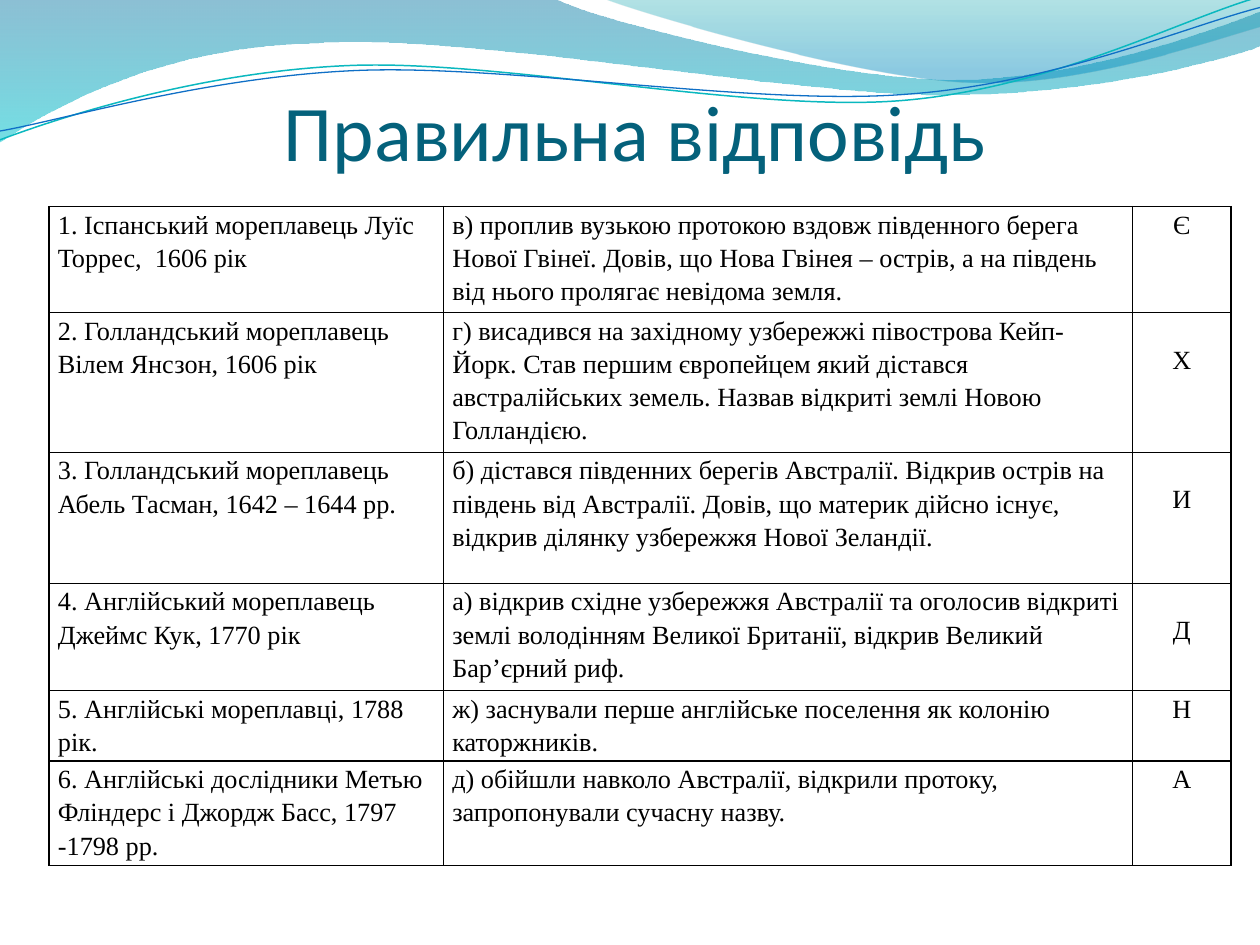
"""Build a slide with a table of answers below a band of waves."""
import math
import pptx
import pptx.dml.color
import pptx.enum.text
import pptx.oxml
import pptx.oxml.ns
import pptx.util
from pptx.util import Inches


def color(code):
    """Turn a hex string into a colour."""
    return pptx.dml.color.RGBColor.from_string(code)


def trace(shapes, start, parts, closed):
    """Draw an outline whose parts are points (lines) or point triples (curves)."""
    pen = shapes.build_freeform(Inches(start[0]), Inches(start[1]), scale=1.0)
    pen.add_line_segments([(Inches(part[i]), Inches(part[i + 1]))
                           for part in parts for i in range(0, len(part), 2)], close=closed)
    shape = pen.convert_to_shape()
    shape.shadow.inherit = False
    lines = iter(shape.element.spPr.findall(".//" + pptx.oxml.ns.qn("a:lnTo")))
    for part in parts:
        line = next(lines)
        if len(part) == 6:
            curve = pptx.oxml.parse_xml(f'<a:cubicBezTo {pptx.oxml.ns.nsdecls("a")}/>')
            line.addprevious(curve)
            for node in (line, next(lines), next(lines)):
                curve.append(node[0])
                node.getparent().remove(node)
    return shape


deck = pptx.Presentation()
deck.slide_width, deck.slide_height = Inches(10), Inches(7.5)
slide = deck.slides.add_slide(deck.slide_layouts[5])
shapes = slide.shapes
slide.background.fill.solid()
slide.background.fill.fore_color.rgb = color("FFFFFF")

bands = [
    ((0, 0), [(4.4, -0.01), (4.76, 0.17, 6.64, 0.63, 7.58, 0.63),
              (8.53, 0.63, 9.58, 0.26, 10, 0.09), (10.01, 0.36),
              (9.83, 0.44, 8.7, 0.76, 7.46, 0.75), (6.22, 0.75, 3.82, 0.28, 2.57, 0.34),
              (1.29, 0.36, 0.46, 0.83, -0.01, 1.13), (0, 0)],
     [(0, "0074A1", 45), (1, "00C6CF", 55)]),
    ((4.79, -0.01), [(5.09, 0.11, 6.82, 0.62, 7.69, 0.65),
                     (8.56, 0.69, 9.61, 0.32, 10, 0.21), (10, 0), (4.79, -0.01)],
     [(0, "00A1A9", 30), (0.8, "008BBF", 45)]),
]
for start, parts, stops in bands:
    band = trace(shapes, start, parts, True)
    band.line.fill.background()
    band.fill.gradient()
    band.fill.gradient_angle = 270
    for stop, (place, code, alpha) in zip(band.fill.gradient_stops, stops):
        stop.position = place
        stop.color.rgb = color(code)
    tints = band.element.spPr.findall(".//" + pptx.oxml.ns.qn("a:srgbClr"))
    for tint, (place, code, alpha) in zip(tints, stops):
        tint.append(pptx.oxml.parse_xml(
            f'<a:alpha {pptx.oxml.ns.nsdecls("a")} val="{alpha * 1000}"/>'))

waves = [
    ((4.99, 0.57), [(0, 1.11), (0.48, 0.93, 1.58, 0.57, 2.77, 0.52),
                    (3.95, 0.47, 5.93, 0.89, 7.13, 0.8),
                    (8.33, 0.71, 9.38, 0.15, 9.98, -0.02)], "0AB8BF", 0.85),
    ((5, 0.59), [(0, 1.04), (0.47, 0.96, 1.64, 0.61, 2.83, 0.56),
                 (4.03, 0.51, 5.97, 0.84, 7.17, 0.75),
                 (8.36, 0.67, 9.41, 0.21, 10, 0.06)], "0F6FC6", 0.75),
]
tilt = math.radians(2.7)
for (mid, level), parts, code, width in waves:
    flat = []
    for part in parts:
        turned = []
        for x, y in zip(part[::2], part[1::2]):
            turned += [mid + (x - mid) * math.cos(tilt) - (y - level) * math.sin(tilt),
                       level + (x - mid) * math.sin(tilt) + (y - level) * math.cos(tilt)]
        flat.append(turned)
    wave = trace(shapes, flat[0], flat[1:], False)
    wave.rotation = 357.3
    wave.fill.background()
    wave.line.color.rgb = color(code)
    wave.line.width = pptx.util.Pt(width)

title = shapes.title
shapes.element.append(title.element)
title.left, title.top, title.width, title.height = map(Inches, (0.54, 0.85, 9, 0.56))
frame = title.text_frame
frame.text = "Правильна відповідь"
frame.auto_size = pptx.enum.text.MSO_AUTO_SIZE.NONE
frame.vertical_anchor = pptx.enum.text.MSO_ANCHOR.BOTTOM
frame.margin_left = frame.margin_right = frame.margin_bottom = 0
frame.margin_top = Inches(0.05)
head = frame.paragraphs[0]
head.alignment = pptx.enum.text.PP_ALIGN.CENTER
head.font.name, head.font.size = "Calibri", pptx.util.Pt(45)
head.font.color.rgb = color("04617B")

rows = [
    (0.84, 0, "1. Іспанський мореплавець Луїс Торрес,  1606 рік",
     "в) проплив вузькою протокою вздовж південного берега Нової Гвінеї. Довів, що Нова Гвінея – острів, а на південь від нього пролягає невідома земля.", "Є"),
    (1.11, 0.23, "2. Голландський мореплавець Вілем Янсзон, 1606 рік",
     "г) висадився на західному узбережжі півострова Кейп-Йорк. Став першим європейцем який дістався австралійських земель. Назвав відкриті землі Новою Голландією.", "Х"),
    (1.04, 0.23, "3. Голландський мореплавець Абель Тасман, 1642 – 1644 рр.",
     "б) дістався південних берегів Австралії. Відкрив острів на південь від Австралії. Довів, що материк дійсно існує, відкрив ділянку узбережжя Нової Зеландії.", "И"),
    (0.85, 0.23, "4. Англійський мореплавець Джеймс Кук, 1770 рік",
     "а) відкрив східне узбережжя Австралії та оголосив відкриті землі володінням Великої Британії, відкрив Великий Бар’єрний риф.", "Д"),
    (0.56, 0, "5. Англійські мореплавці, 1788 рік.",
     "ж) заснували перше англійське поселення як колонію каторжників.", "Н"),
    (0.83, 0, "6. Англійські дослідники Метью Фліндерс і Джордж Басс, 1797 -1798 рр.",
     "д) обійшли навколо Австралії, відкрили протоку, запропонували сучасну назву.", "А"),
]
table = shapes.add_table(len(rows), 3, Inches(0.39), Inches(1.64), Inches(9.38), Inches(5.23)).table
table.first_row = table.horz_banding = False
for column, width in zip(table.columns, (3.13, 5.47, 0.78)):
    column.width = Inches(width)
for r, (height, drop, *texts) in enumerate(rows):
    table.rows[r].height = Inches(height)
    for c, text in enumerate(texts):
        cell = table.cell(r, c)
        cell.text = text
        cell.margin_left = cell.margin_right = Inches(0.07)
        cell.margin_top = Inches(drop if c == 2 else 0)
        cell.margin_bottom = 0
        para = cell.text_frame.paragraphs[0]
        para.line_spacing = 1.15
        para.font.name, para.font.size = "Times New Roman", pptx.util.Pt(15)
        para.font.color.rgb = color("000000")
        if c == 2:
            para.alignment = pptx.enum.text.PP_ALIGN.CENTER
        props = cell._tc.get_or_add_tcPr()
        for side in ("lnL", "lnR", "lnT", "lnB"):
            props.append(pptx.oxml.parse_xml(
                f'<a:{side} {pptx.oxml.ns.nsdecls("a")} w="12700"><a:solidFill>'
                f'<a:srgbClr val="000000"/></a:solidFill></a:{side}>'))
        cell.fill.background()

deck.save("out.pptx")
